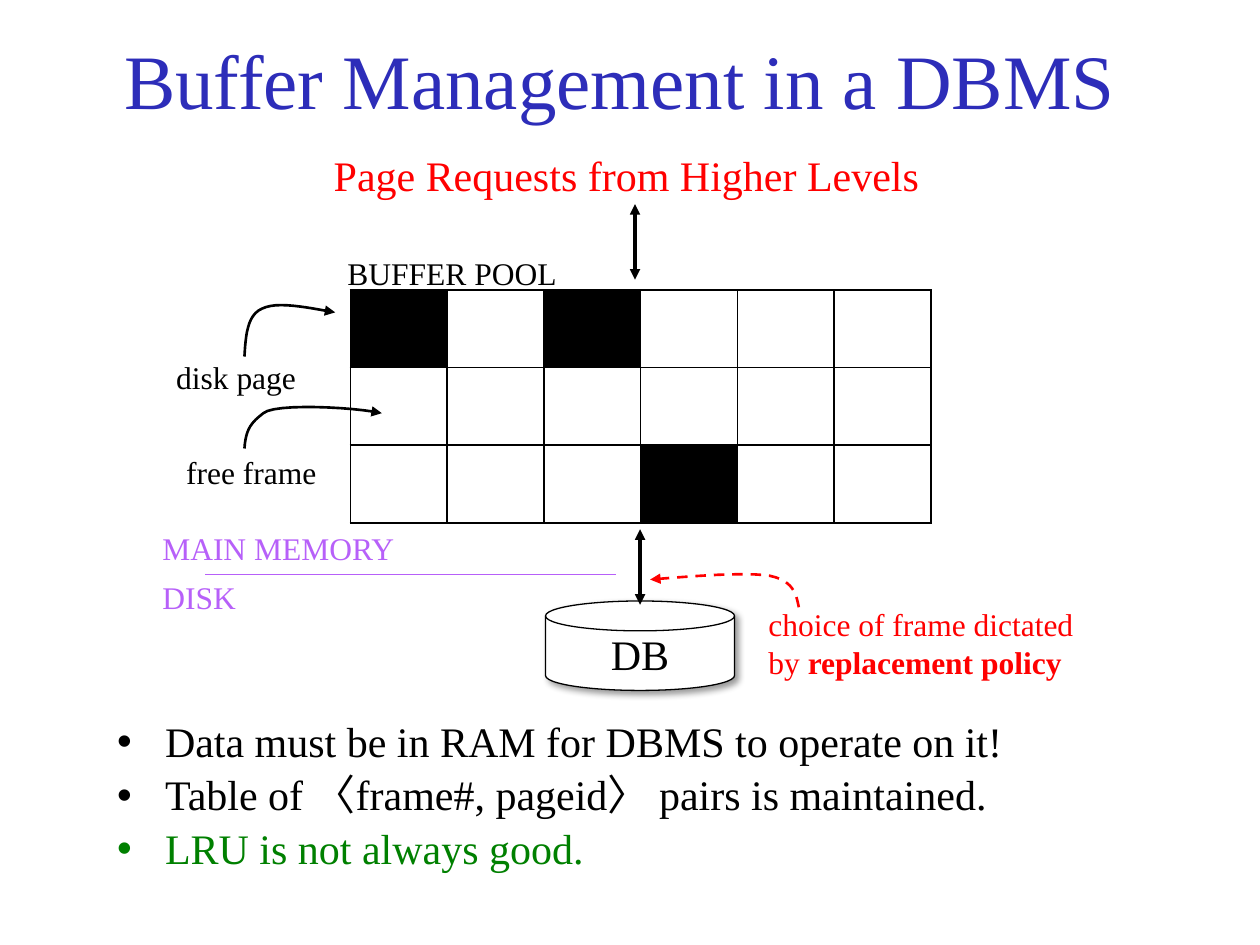
from lxml import etree
from pptx import Presentation
from pptx.dml.color import RGBColor
from pptx.enum.dml import MSO_LINE
from pptx.enum.shapes import MSO_CONNECTOR, MSO_SHAPE
from pptx.enum.text import MSO_ANCHOR, MSO_AUTO_SIZE, PP_ALIGN
from pptx.oxml import parse_xml
from pptx.oxml.ns import nsdecls, qn
from pptx.util import Inches, Pt

LEFT, CENTER = PP_ALIGN.LEFT, PP_ALIGN.CENTER
STRAIGHT = MSO_CONNECTOR.STRAIGHT
COLORS = {"black": "000000", "white": "FFFFFF", "title": "2D2DB9",
          "red": "FF0000", "violet": "B760F9", "green": "008000"}
FONT = "Times New Roman"


def write(paragraph, text, size=18, color="black", bold=False, align=LEFT):
    paragraph.alignment = align
    run = paragraph.add_run()
    run.text = text
    run.font.name = FONT
    run.font.size = Pt(size)
    run.font.bold = bold
    run.font.color.rgb = RGBColor.from_string(COLORS[color])


def draw_line(shape, color, width, ends=()):
    """Style an outline without shadow; ends may hold headEnd and tailEnd."""
    shape.line.color.rgb = RGBColor.from_string(COLORS[color])
    shape.line.width = Pt(width)
    properties = shape.line._get_or_add_ln()
    for end in ends:
        etree.SubElement(properties, qn(f"a:{end}"), type="triangle")
    etree.SubElement(shape._element.spPr, qn("a:effectLst"))


presentation = Presentation()
presentation.slide_width = Inches(10)
presentation.slide_height = Inches(7.5)
slide = presentation.slides.add_slide(presentation.slide_layouts[1])
shapes = slide.shapes

# Title and bullet list
title, body = slide.placeholders
for placeholder, box in ((title, (0.67, 0, 8.5, 1.25)),
                         (body, (0.83, 5.67, 8.5, 1.35))):
    placeholder.left, placeholder.top, placeholder.width, placeholder.height = map(Inches, box)
    placeholder.text_frame.auto_size = MSO_AUTO_SIZE.NONE
title.text_frame.vertical_anchor = MSO_ANCHOR.MIDDLE
write(title.text_frame.paragraphs[0], "Buffer Management in a DBMS",
      size=44, color="title", align=CENTER)

bullets = [("Data must be in RAM for DBMS to operate on it!", "black"),
           ("Table of 〈frame#, pageid〉 pairs is maintained.", "black"),
           ("LRU is not always good.", "green")]
for index, (text, color) in enumerate(bullets):
    paragraph = body.text_frame.add_paragraph() if index else body.text_frame.paragraphs[0]
    write(paragraph, text, size=24, color=color)
    paragraph.line_spacing = 0.9
    properties = paragraph._p.get_or_add_pPr()
    properties.set("marL", str(Inches(0.38)))
    properties.set("indent", str(Inches(-0.38)))
    etree.SubElement(properties, qn("a:buChar"), char="•")

# Buffer pool grid
ROWS, COLUMNS = 3, 6
USED_FRAMES = {(0, 0), (0, 2), (2, 3)}
frame = shapes.add_table(ROWS, COLUMNS, Inches(2.78), Inches(2.3), Inches(4.61), Inches(1.85))
pool = frame.table
pool.first_row = pool.horz_banding = False
for row in range(ROWS):
    for column in range(COLUMNS):
        cell = pool.cell(row, column)
        properties = cell._tc.get_or_add_tcPr()
        for side in ("lnL", "lnR", "lnT", "lnB"):
            properties.append(parse_xml(
                f'<a:{side} {nsdecls("a")} w="{Pt(1)}"><a:solidFill>'
                f'<a:srgbClr val="{COLORS["black"]}"/></a:solidFill></a:{side}>'))
        cell.fill.solid()
        fill = "black" if (row, column) in USED_FRAMES else "white"
        cell.fill.fore_color.rgb = RGBColor.from_string(COLORS[fill])

# Labels
labels = [("Page Requests from Higher Levels", 2.55, 1.14, 4.89, 24, "red"),
          ("BUFFER POOL", 2.66, 1.97, 1.86, 18, "black"),
          ("disk page", 1.3, 2.79, 1.15, 18, "black"),
          ("free frame", 1.38, 3.55, 1.24, 18, "black"),
          ("MAIN MEMORY", 1.19, 4.15, 2.06, 18, "violet"),
          ("DISK", 1.19, 4.54, 0.78, 18, "violet"),
          ("choice of frame dictated", 6, 4.75, 2.65, 18, "red")]
for text, left, top, width, size, color in labels:
    label = shapes.add_textbox(Inches(left), Inches(top), Inches(width), Inches(0.4))
    label.text_frame.word_wrap = False
    write(label.text_frame.paragraphs[0], text, size=size, color=color)
# The last label, on replacement, has a second line
label.height = Inches(0.71)
policy = label.text_frame.add_paragraph()
write(policy, "by ", color="red")
write(policy, "replacement policy", color="red", bold=True)

# Database cylinder
database = shapes.add_shape(MSO_SHAPE.FLOWCHART_MAGNETIC_DISK,
                            Inches(4.33), Inches(4.77), Inches(1.5), Inches(0.71))
database.fill.solid()
database.fill.fore_color.rgb = RGBColor.from_string(COLORS["white"])
draw_line(database, "black", 0.75)
database._element.spPr.find(qn("a:effectLst")).append(parse_xml(
    f'<a:outerShdw {nsdecls("a")} blurRad="{Pt(4)}" dist="{Pt(3)}" dir="2700000">'
    f'<a:srgbClr val="{COLORS["black"]}"><a:alpha val="40000"/></a:srgbClr></a:outerShdw>'))
write(database.text_frame.paragraphs[0], "DB", size=24, align=CENTER)

# Memory boundary and vertical two-way arrows
both_ends = ("headEnd", "tailEnd")
for x1, y1, x2, y2, color, width, ends in (
        (1.63, 4.56, 4.89, 4.56, "violet", 1, ()),
        (5.04, 1.62, 5.04, 2.22, "black", 2, both_ends),
        (5.08, 4.2, 5.08, 4.8, "black", 2, both_ends)):
    connector = shapes.add_connector(STRAIGHT, *map(Inches, (x1, y1, x2, y2)))
    draw_line(connector, color, width, ends)

# Curved pointers: two joined Bezier curves each, drawn in short steps
STEPS = 12
pointers = [
    ("black", None, [(1.94, 2.83), (1.95, 2.67), (1.96, 2.5), (2.08, 2.45),
                     (2.2, 2.39), (2.43, 2.44), (2.66, 2.48)]),
    ("black", None, [(1.94, 3.56), (1.95, 3.4), (2, 3.35), (2.09, 3.28),
                     (2.18, 3.2), (2.8, 3.23), (3.03, 3.28)]),
    ("red", MSO_LINE.DASH, [(6.34, 4.82), (6.32, 4.72), (6.3, 4.61), (6.11, 4.57),
                            (5.91, 4.54), (5.53, 4.57), (5.16, 4.6)])]
for color, dash, points in pointers:
    vertices = []
    for first in (0, 3):
        for step in range(1, STEPS + 1):
            t = step / STEPS
            weights = ((1 - t) ** 3, 3 * t * (1 - t) ** 2, 3 * t ** 2 * (1 - t), t ** 3)
            vertices.append(tuple(
                Inches(sum(w * point[axis] for w, point in zip(weights, points[first:first + 4])))
                for axis in (0, 1)))
    builder = shapes.build_freeform(*map(Inches, points[0]))
    builder.add_line_segments(vertices, close=False)
    pointer = builder.convert_to_shape()
    pointer.fill.background()
    pointer.line.dash_style = dash
    draw_line(pointer, color, 1.5, ("tailEnd",))

presentation.save("out.pptx")
